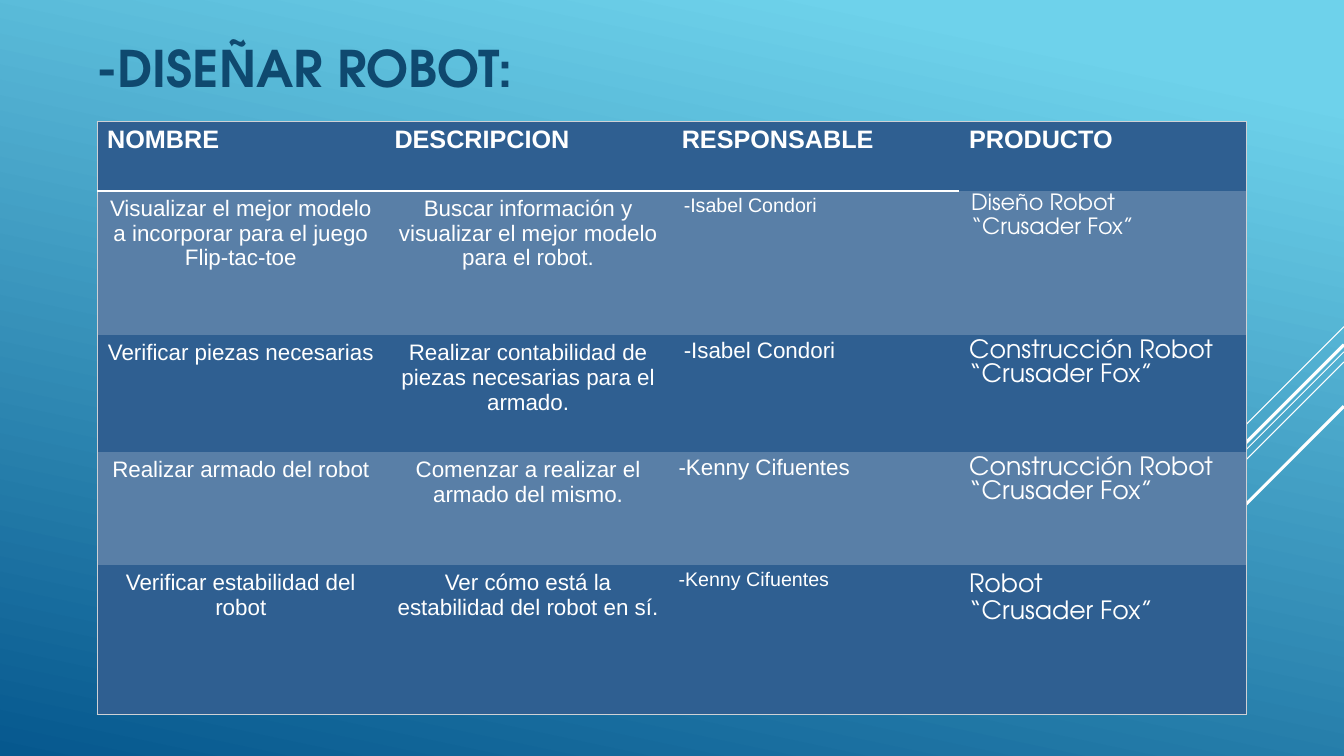
from dataclasses import dataclass

from lxml.etree import SubElement
from pptx import Presentation
from pptx.dml.color import RGBColor
from pptx.enum.shapes import MSO_CONNECTOR
from pptx.enum.text import MSO_ANCHOR, PP_ALIGN
from pptx.oxml.ns import qn
from pptx.util import Pt


@dataclass(frozen=True)
class Theme:
    sky: str = "6ED2EB"
    deep: str = "06588E"
    title: str = "0F496F"
    white: str = "FFFFFF"
    row: str = "2F5F91"
    band: str = "597FA7"
    edge: str = "CFD1D5"
    display: str = "TeX Gyre Adventor"
    body: str = "Arial"
    title_size: int = 36
    large: int = 18
    medium: int = 16
    small: int = 14


T = Theme()
NO_STYLE = "{2D5ABB26-0587-4C30-8999-92F81FD0307C}"
WIDE, TALL = (7.2, 3.6), (8.64, 0)
NARROW = (4.9, 0)

HEADERS = ["NOMBRE", "DESCRIPCION", "RESPONSABLE", "PRODUCTO"]
HEADER = dict(size=T.large, bold=True)
TASK = dict(size=T.medium, align=PP_ALIGN.CENTER)
PRODUCT = dict(size=T.large, font=T.display)
OWNER = dict(size=T.medium, spacing=1.15)
SMALL_OWNER = dict(size=T.small, spacing=1.15, before=10)

TASKS = [
    ["Visualizar el mejor modelo a incorporar para el juego Flip-tac-toe",
     "Buscar información y visualizar el mejor modelo para el robot.",
     ("-Isabel Condori", dict(SMALL_OWNER, inset=TALL)),
     ("Diseño Robot\v“Crusader Fox”",
      dict(PRODUCT, size=T.medium, spacing=1.15, after=10, inset=TALL))],
    ["Verificar piezas necesarias",
     "Realizar contabilidad de piezas necesarias para el armado.",
     ("-Isabel Condori", dict(OWNER, inset=TALL)),
     ("Construcción Robot\v“Crusader Fox”", PRODUCT)],
    ["Realizar armado del robot",
     "Comenzar a realizar el armado del mismo.",
     ("-Kenny Cifuentes", dict(OWNER, inset=NARROW)),
     ("Construcción Robot\v“Crusader Fox”", PRODUCT)],
    ["Verificar estabilidad del robot",
     "Ver cómo está la estabilidad del robot en sí.",
     ("-Kenny Cifuentes", dict(SMALL_OWNER, inset=NARROW)),
     ("Robot\v“Crusader Fox”", dict(PRODUCT, spacing=1.15, after=10))],
]
ROW_HEIGHTS = [50, 103, 83.5, 80.75, 106.5]
RAYS = [(233.3, 72, 0.75), (251.3, 234.7, 0.75), (258.5, 149, 0.75),
        (246.2, 137.5, 2.25), (290.2, 100, 2.25)]


def rgb(code):
    return RGBColor.from_string(code)


def write(tf, text, size, font=T.body, color=T.white, bold=False,
          align=PP_ALIGN.LEFT, spacing=None, before=0, after=0):
    tf.text = text
    p = tf.paragraphs[0]
    p.alignment = align
    p.space_before, p.space_after = Pt(before), Pt(after)
    if spacing:
        p.line_spacing = spacing
    for r in p.runs:
        r.font.name, r.font.size, r.font.bold = font, Pt(size), bold
        r.font.color.rgb = rgb(color)


def add_background(s):
    fill = s.background.fill
    fill.gradient()
    fill.gradient_angle = 258
    for stop, color, position in zip(fill.gradient_stops, (T.sky, T.deep), (0.1, 1)):
        stop.color.rgb = rgb(color)
        stop.position = position


def add_title(s, text, x, y, w, h):
    sp = s.shapes.title
    sp.left, sp.top, sp.width, sp.height = Pt(x), Pt(y), Pt(w), Pt(h)
    tf = sp.text_frame
    tf.word_wrap = True
    tf.vertical_anchor = MSO_ANCHOR.MIDDLE
    write(tf, text, T.title_size, font=T.display, color=T.title, bold=True, spacing=0.9)


def add_rays(s, right):
    for top, reach, weight in RAYS:
        ray = s.shapes.add_connector(MSO_CONNECTOR.STRAIGHT, Pt(right), Pt(top),
                                     Pt(right - reach), Pt(top + reach))
        ray.line.color.rgb = rgb(T.white)
        ray.line.width = Pt(weight)
        SubElement(ray._element.spPr, qn("a:effectLst"))


def add_border(cell, side, color, weight, alpha=100):
    ln = SubElement(cell._tc.get_or_add_tcPr(), qn(f"a:ln{side}"), w=str(Pt(weight)))
    clr = SubElement(SubElement(ln, qn("a:solidFill")), qn("a:srgbClr"), val=color)
    SubElement(clr, qn("a:alpha"), val=str(alpha * 1000))


def frame_cell(cell, i, j, last_row, last_col):
    outer = {"L": j == 0, "R": j == last_col, "T": i == 0, "B": i == last_row}
    for side, on_edge in outer.items():
        if on_edge:
            add_border(cell, side, T.edge, 0.75, 60)
        elif side == "B" and i == 0 and j < last_col:
            add_border(cell, side, T.white, 2.25)


def fill_cell(cell, text, color, inset=WIDE, **style):
    cell.fill.solid()
    cell.fill.fore_color.rgb = rgb(color)
    cell.margin_left = cell.margin_right = Pt(inset[0])
    cell.margin_top = cell.margin_bottom = Pt(inset[1])
    write(cell.text_frame, text, **style)


def add_task_table(s, x, y, w):
    rows = [[(text, HEADER) for text in HEADERS]]
    rows += [[(name, TASK), (description, TASK), owner, product]
             for name, description, owner, product in TASKS]
    table = s.shapes.add_table(len(rows), len(HEADERS), Pt(x), Pt(y), Pt(w),
                               Pt(sum(ROW_HEIGHTS))).table
    table._tbl.tblPr.find(qn("a:tableStyleId")).text = NO_STYLE
    table.horz_banding = False
    for column in table.columns:
        column.width = Pt(w / len(HEADERS))
    for i, (row, height) in enumerate(zip(rows, ROW_HEIGHTS)):
        table.rows[i].height = Pt(height)
        for j, (text, style) in enumerate(row):
            cell = table.cell(i, j)
            frame_cell(cell, i, j, len(rows) - 1, len(HEADERS) - 1)
            fill_cell(cell, text, T.band if i % 2 else T.row, **style)


def main():
    prs = Presentation()
    prs.slide_width, prs.slide_height = Pt(960), Pt(540)
    s = prs.slides.add_slide(prs.slide_layouts[5])
    add_background(s)
    add_rays(s, 960)
    add_title(s, "-DISEÑAR ROBOT:", 61.5, 16, 780, 70)
    add_task_table(s, 69.4, 86.4, 820.8)
    prs.save("out.pptx")


if __name__ == "__main__":
    main()
